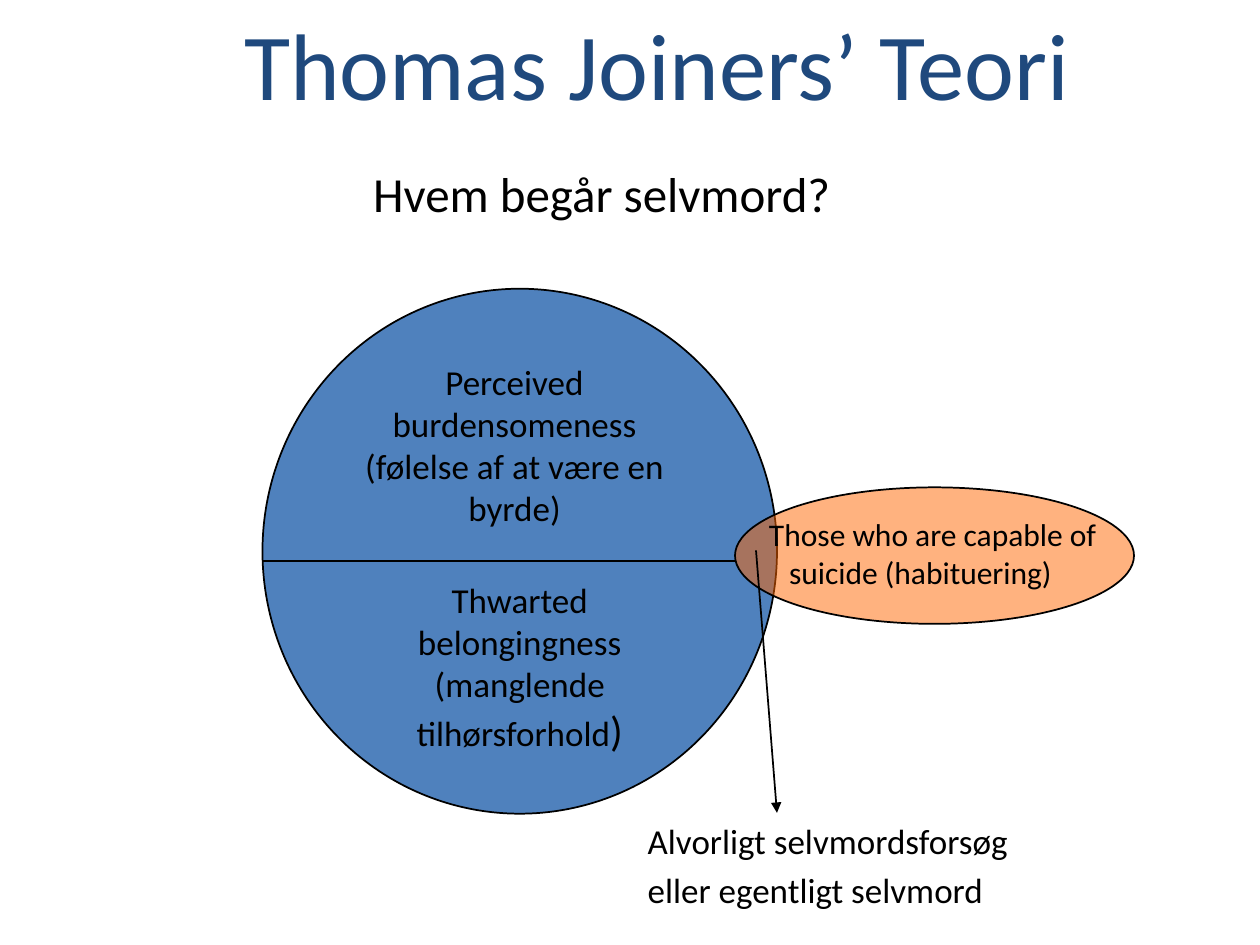
from dataclasses import dataclass

from lxml.etree import SubElement
from pptx import Presentation
from pptx.dml.color import RGBColor
from pptx.enum.shapes import MSO_CONNECTOR, MSO_SHAPE
from pptx.enum.text import PP_ALIGN
from pptx.oxml.ns import qn
from pptx.util import Pt


@dataclass(frozen=True)
class Theme:
    font: str = "Calibri"
    ink: str = "000000"
    title: str = "1F497D"
    circle: str = "4F81BD"
    capable: str = "FF6600"
    title_size: int = 54
    question_size: int = 28
    bracket_size: int = 24
    body_size: int = 20
    small_size: int = 18
    line: int = 1


THEME = Theme()


def style_run(r, size, color=THEME.ink):
    r.font.name = THEME.font
    r.font.size = Pt(size)
    r.font.color.rgb = RGBColor.from_string(color)


def add_text(s, box, text, size, color=THEME.ink, align=PP_ALIGN.CENTER):
    tf = s.shapes.add_textbox(*map(Pt, box)).text_frame
    tf.word_wrap = True
    tf.text = text
    for p in tf.paragraphs:
        p.alignment = align
        for r in p.runs:
            style_run(r, size, color)
    return tf


def add_ellipse(s, box, color):
    sp = s.shapes.add_shape(MSO_SHAPE.OVAL, *map(Pt, box))
    sp.shadow.inherit = False
    sp.fill.solid()
    sp.fill.fore_color.rgb = RGBColor.from_string(color)
    sp.line.color.rgb = RGBColor.from_string(THEME.ink)
    sp.line.width = Pt(THEME.line)
    return sp


def add_line(s, x1, y1, x2, y2):
    ln = s.shapes.add_connector(MSO_CONNECTOR.STRAIGHT, *map(Pt, (x1, y1, x2, y2)))
    ln.line.color.rgb = RGBColor.from_string(THEME.ink)
    ln.line.width = Pt(THEME.line)
    SubElement(ln._element.spPr, qn("a:effectLst"))
    return ln


def add_header(s, x, y, w, h):
    add_text(s, (x, y, w, 72), "Thomas Joiners’ Teori", THEME.title_size, THEME.title)
    add_text(s, (x + 120, y + h - 41, 327.6, 41), "Hvem begår selvmord?",
             THEME.question_size)


def add_desire_circle(s, x, y, w, h):
    add_ellipse(s, (x, y, w, h), THEME.circle)
    add_line(s, x, y + 155.5, x + 270, y + 155.5)
    add_text(s, (x + 48, y + 37.5, 192, 104.5),
             "Perceived\nburdensomeness (følelse af at være en byrde)", THEME.body_size)
    tf = add_text(s, (x + 66, y + 162, 162, 108),
                  "Thwarted\nbelongingness (manglende tilhørsforhold", THEME.body_size)
    r = tf.paragraphs[-1].add_run()
    r.text = ")"
    style_run(r, THEME.bracket_size)


def add_capability(s, x, y, w, h):
    sp = add_ellipse(s, (x, y, w, h), THEME.capable)
    clr = sp._element.spPr.find(qn("a:solidFill")).find(qn("a:srgbClr"))
    SubElement(clr, qn("a:alpha"), val="50000")
    tf = add_text(s, (x - 12, y + 12.5, w + 8, 52.5),
                  "Those who are capable of suicide (habituering)", THEME.small_size)
    tf.paragraphs[0]._p.get_or_add_pPr().set("indent", str(Pt(14)))


def add_outcome(s, x, y, w, h):
    arrow = add_line(s, x + 69, y - 150, x + 81, y)
    SubElement(arrow.line._get_or_add_ln(), qn("a:tailEnd"), type="triangle")
    tf = add_text(s, (x, y, w, h), "Alvorligt selvmordsforsøg\neller egentligt selvmord",
                  THEME.body_size, align=PP_ALIGN.LEFT)
    for p in tf.paragraphs:
        p.space_before = Pt(THEME.body_size * 0.2)


def main():
    prs = Presentation()
    prs.slide_width, prs.slide_height = Pt(720), Pt(540)
    s = prs.slides.add_slide(prs.slide_layouts[6])
    add_header(s, 60, 0, 630.5, 131)
    add_desire_circle(s, 150, 165, 294, 300)
    add_capability(s, 420, 278.5, 228, 78)
    add_outcome(s, 363, 464.5, 270, 75.5)
    prs.save("out.pptx")


if __name__ == "__main__":
    main()
